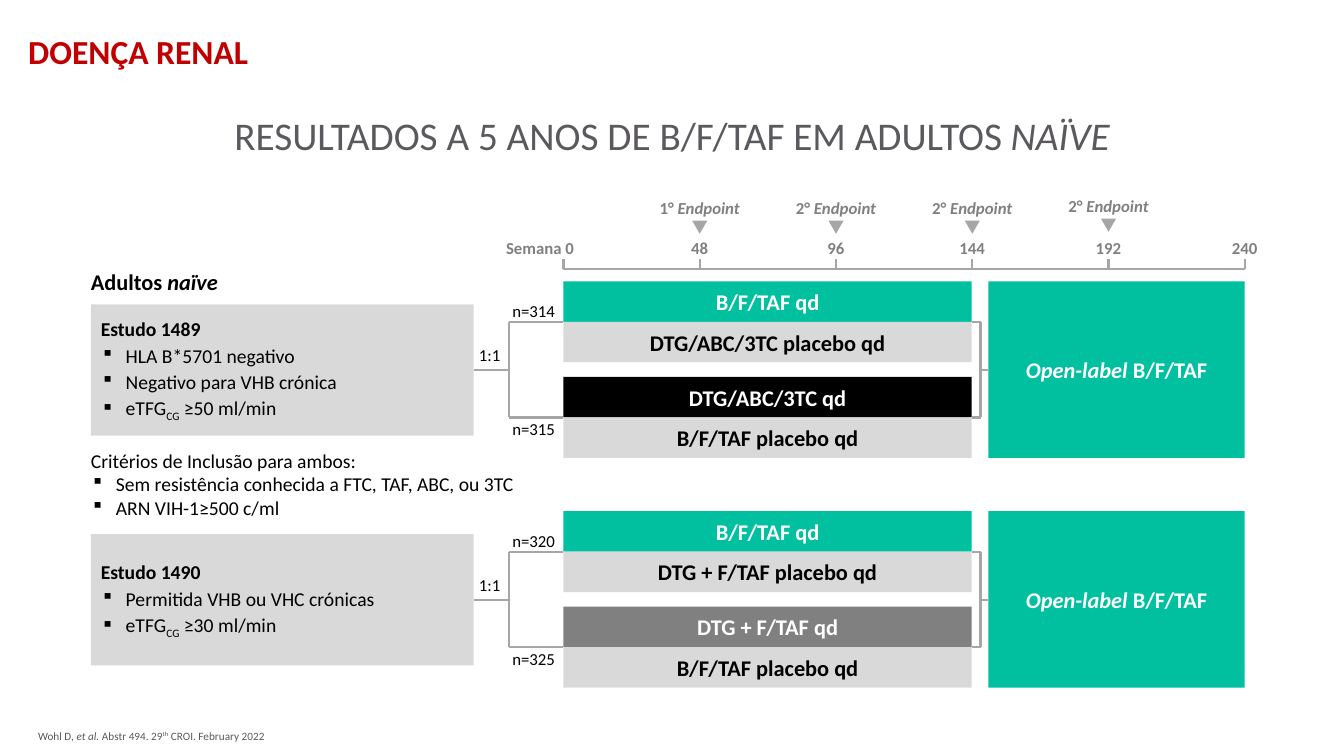
from lxml import etree
from pptx import Presentation
from pptx.dml.color import RGBColor
from pptx.enum import shapes, text
from pptx.oxml.ns import qn
from pptx.util import Cm, Pt

COLORS = {
    "black": "000000", "white": "FFFFFF", "teal": "00C0A0", "panel": "D9D9D9",
    "line": "A6A6A6", "gray": "808080", "red": "C00000", "title": "5B595D",
    "footer": "595959",
}
FONT = "Calibri"
LEFT = 2.29
AXIS_START, AXIS_END, AXIS_Y = 14.2, 31.37, 6.78
WEEKS = ["48", "96", "144", "192", "240"]
WEEK_STEP = (AXIS_END - AXIS_START) / len(WEEKS)
ENDPOINTS = [("1° ", 4.98), ("2° ", 4.98), ("2° ", 4.98), ("2° ", 4.93)]
BAR_WIDTH, BAR_HEIGHT = 10.29, 1.02
ARM_OFFSETS = (1.02, 3.43)
STEM_OFFSET = 2.23
OPEN_LABEL_X = 24.91

STUDIES = [
    {
        "top": 7.09,
        "name": "Estudo 1489",
        "criteria": [[("HLA B*5701 negativo", {})],
                     [("Negativo para VHB crónica", {})],
                     [("eTFG", {}), ("CG", {"baseline": -25}), (" ≥50 ml/min", {})]],
        "counts": ("n=314", "n=315"),
        "bars": [("B/F/TAF qd", "teal", "white"),
                 ("DTG/ABC/3TC placebo qd", "panel", "black"),
                 ("DTG/ABC/3TC qd", "black", "white"),
                 ("B/F/TAF placebo qd", "panel", "black")],
    },
    {
        "top": 12.88,
        "name": "Estudo 1490",
        "criteria": [[("Permitida VHB ou VHC crónicas", {})],
                     [("eTFG", {}), ("CG", {"baseline": -25}), (" ≥30 ml/min", {})]],
        "counts": ("n=320", "n=325"),
        "bars": [("B/F/TAF qd", "teal", "white"),
                 ("DTG + F/TAF placebo qd", "panel", "black"),
                 ("DTG + F/TAF qd", "gray", "white"),
                 ("B/F/TAF placebo qd", "panel", "black")],
    },
]


def rgb(name):
    return RGBColor.from_string(COLORS[name])


def add_runs(para, runs, size, color, bold=False):
    """Add (wording, style) pairs; style may hold italic, bold or baseline in percent."""
    for wording, style in runs:
        span = para.add_run()
        span.text = wording
        span.font.name = FONT
        span.font.size = Pt(size)
        span.font.color.rgb = rgb(color)
        span.font.bold = style.get("bold", bold)
        span.font.italic = style.get("italic", False)
        if "baseline" in style:
            span.font._element.set("baseline", str(style["baseline"] * 1000))


def set_bullet(para):
    properties = para._p.get_or_add_pPr()
    properties.set("marL", str(Cm(0.63)))
    properties.set("indent", str(-Cm(0.62)))
    etree.SubElement(properties, qn("a:buSzPct")).set("val", "90000")
    etree.SubElement(properties, qn("a:buChar")).set("char", "▪")


def add_list(frame, heading, items, bold_heading, space_before):
    """Fill a frame with a heading and bulleted items."""
    for number, runs in enumerate([heading] + items):
        para = frame.add_paragraph() if number else frame.paragraphs[0]
        para.alignment = text.PP_ALIGN.LEFT
        para.space_before = Pt(space_before)
        add_runs(para, runs, 14, "black", bold_heading and number == 0)
        if number:
            set_bullet(para)


def add_text_box(page, left, top, width, height, inset=0.0):
    box = page.shapes.add_textbox(Cm(left), Cm(top), Cm(width), Cm(height))
    frame = box.text_frame
    frame.word_wrap = True
    frame.margin_left = frame.margin_right = Cm(inset)
    frame.margin_top = frame.margin_bottom = Cm(inset / 2)
    return frame


def add_label(page, center, top, width, runs, color="black", bold=False):
    frame = add_text_box(page, center - width / 2, top, width, 0.51)
    para = frame.paragraphs[0]
    para.alignment = text.PP_ALIGN.CENTER
    add_runs(para, runs, 12, color, bold)


def add_block(page, left, top, width, height, fill, kind=shapes.MSO_SHAPE.RECTANGLE):
    block = page.shapes.add_shape(kind, Cm(left), Cm(top), Cm(width), Cm(height))
    block.shadow.inherit = False
    block.fill.solid()
    block.fill.fore_color.rgb = rgb(fill)
    block.line.fill.background()
    block.text_frame.word_wrap = True
    block.text_frame.vertical_anchor = text.MSO_ANCHOR.MIDDLE
    return block


def add_bar(page, left, top, width, height, fill, runs, color):
    para = add_block(page, left, top, width, height, fill).text_frame.paragraphs[0]
    para.alignment = text.PP_ALIGN.CENTER
    add_runs(para, runs, 16, color, bold=True)


def add_line(page, x1, y1, x2, y2):
    line = page.shapes.add_connector(
        shapes.MSO_CONNECTOR.STRAIGHT, Cm(x1), Cm(y1), Cm(x2), Cm(y2))
    line.line.color.rgb = rgb("line")
    line.line.width = Pt(1.5)
    etree.SubElement(line._element.spPr, qn("a:effectLst"))


def add_bracket(page, top, spine, arm_end, stem_end):
    """Draw a spine with two arms on one side and a stem on the other."""
    upper, lower = (top + offset for offset in ARM_OFFSETS)
    add_line(page, spine, upper, spine, lower)
    for y in (upper, lower):
        add_line(page, spine, y, arm_end, y)
    add_line(page, stem_end, top + STEM_OFFSET, spine, top + STEM_OFFSET)


def add_timeline(page):
    add_line(page, AXIS_START, AXIS_Y, AXIS_END, AXIS_Y)
    for number in range(len(WEEKS) + 1):
        x = AXIS_START + number * WEEK_STEP
        add_line(page, x, AXIS_Y - 0.25, x, AXIS_Y)
    add_label(page, 13.61, 5.99, 2.24, [("Semana 0", {})], "gray", True)
    for number, week in enumerate(WEEKS, 1):
        add_label(page, AXIS_START + number * WEEK_STEP, 5.99, 1.1,
                  [(week, {})], "gray", True)
    for number, (order, top) in enumerate(ENDPOINTS, 1):
        x = AXIS_START + number * WEEK_STEP
        add_label(page, x, top, 2.57, [(order, {}), ("Endpoint", {"italic": True})],
                  "gray", True)
        marker = add_block(page, x - 0.19, top + 0.58, 0.38, 0.33, "line",
                           shapes.MSO_SHAPE.ISOSCELES_TRIANGLE)
        marker.rotation = 180


def add_study(page, study):
    top = study["top"]
    add_bracket(page, top, 12.83, AXIS_START, 11.94)
    add_bracket(page, top, 24.71, AXIS_START + BAR_WIDTH, OPEN_LABEL_X)
    panel = add_block(page, LEFT, top + 0.58, 9.65, 3.31, "panel")
    add_list(panel.text_frame, [(study["name"], {})], study["criteria"], True, 2)
    add_label(page, 12.34, top + 1.6, 0.8, [("1:1", {})])
    for count, offset in zip(study["counts"], (0.49, 3.46)):
        add_label(page, 13.45, top + offset, 1.3, [(count, {})])
    for (wording, fill, color), offset in zip(study["bars"], (0, 1.02, 2.41, 3.43)):
        add_bar(page, AXIS_START, top + offset, BAR_WIDTH, BAR_HEIGHT, fill,
                [(wording, {})], color)
    add_bar(page, OPEN_LABEL_X, top, AXIS_END - OPEN_LABEL_X, 4.45, "teal",
            [("Open-label ", {"italic": True}), ("B/F/TAF", {})], "white")


def set_title(page):
    title = page.shapes.title
    title.left, title.top, title.width, title.height = Cm(0), Cm(2.82), Cm(33.87), Cm(1.42)
    frame = title.text_frame
    frame.vertical_anchor = text.MSO_ANCHOR.TOP
    frame.auto_size = text.MSO_AUTO_SIZE.NONE
    para = frame.paragraphs[0]
    para.alignment = text.PP_ALIGN.CENTER
    para.line_spacing = 0.9
    add_runs(para, [("RESULTADOS A 5 ANOS DE B/F/TAF EM ADULTOS ", {}),
                    ("NAÏVE", {"italic": True})], 28, "title")


def main():
    deck = Presentation()
    deck.slide_width, deck.slide_height = Cm(33.87), Cm(19.05)
    page = deck.slides.add_slide(deck.slide_layouts[5])
    set_title(page)

    section = add_text_box(page, 0.46, 0.66, 22.68, 1.27, 0.25)
    add_runs(section.paragraphs[0], [("DOENÇA RENAL", {})], 24, "red", True)

    add_timeline(page)
    population = add_text_box(page, LEFT, 6.76, 3.48, 0.69)
    add_runs(population.paragraphs[0],
             [("Adultos ", {}), ("naïve", {"italic": True})], 16, "black", True)
    for study in STUDIES:
        add_study(page, study)
    inclusion = add_text_box(page, LEFT, 11.3, 11.2, 1.8)
    add_list(inclusion, [("Critérios de Inclusão para ambos:", {})],
             [[("Sem resistência conhecida a FTC, TAF, ABC, ou 3TC", {})],
              [("ARN VIH-1≥500 c/ml", {})]], False, 0)

    source = add_text_box(page, 0.71, 18.21, 12.47, 0.64, 0.25).paragraphs[0]
    source.line_spacing = 1.1
    add_runs(source, [("Wohl D, ", {}), ("et al. ", {"italic": True}),
                      ("Abstr 494. 29", {}), ("th", {"baseline": 30}),
                      (" CROI. February 2022", {})], 8, "footer")
    deck.save("out.pptx")


if __name__ == "__main__":
    main()
